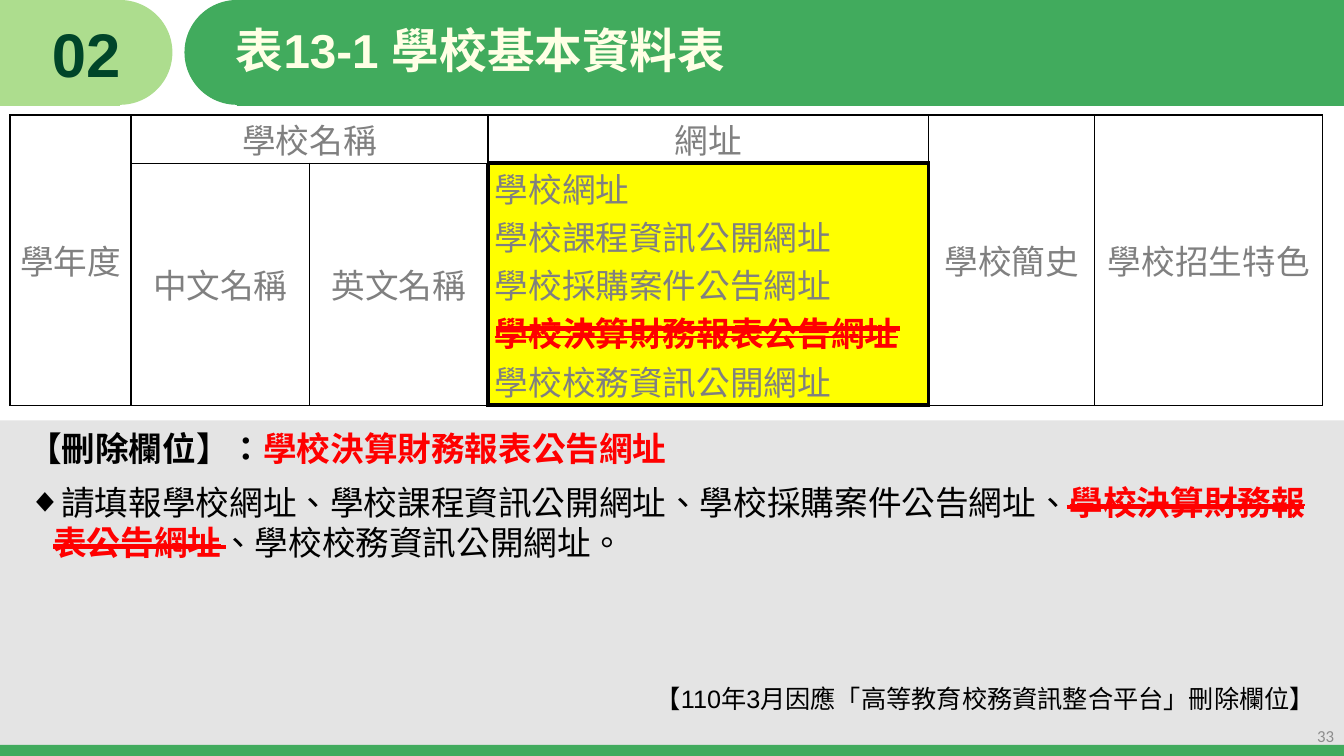
from lxml import etree
from pptx import Presentation
from pptx.dml.color import RGBColor
from pptx.enum.lang import MSO_LANGUAGE_ID
from pptx.enum.shapes import MSO_CONNECTOR, MSO_SHAPE
from pptx.enum.text import MSO_ANCHOR, PP_ALIGN
from pptx.oxml.ns import qn
from pptx.util import Inches, Pt

RECT, OVAL = MSO_SHAPE.RECTANGLE, MSO_SHAPE.OVAL
LINE = MSO_CONNECTOR.STRAIGHT
LEFT, MID, RIGHT = PP_ALIGN.LEFT, PP_ALIGN.CENTER, PP_ALIGN.RIGHT
TOP, CENTRE = MSO_ANCHOR.TOP, MSO_ANCHOR.MIDDLE
TAIWAN = MSO_LANGUAGE_ID.TRADITIONAL_CHINESE

BLACK = RGBColor(0, 0, 0)
WHITE = RGBColor(255, 255, 255)
RED = RGBColor(255, 0, 0)
YELLOW = RGBColor(255, 255, 0)
GREEN = RGBColor(0x41, 0xAB, 0x5D)
LIME = RGBColor(0xAD, 0xDD, 0x8E)
DARK = RGBColor(0x00, 0x45, 0x29)
CREAM = RGBColor(0xFF, 0xFF, 0xE5)
SILVER = RGBColor(0xBF, 0xBF, 0xBF)
GREY = RGBColor(0x80, 0x80, 0x80)
PALE = RGBColor(0x8C, 0x8C, 0x8C)

DROPPED = "學校決算財務報表公告網址"
BANDS = [
    (RECT, (0, 4.17, 13.33, 3.33), SILVER, 41),
    (RECT, (0, 7.39, 13.33, 0.11), GREEN, 100),
    (RECT, (0, 0, 1.19, 1.05), LIME, 100),
    (OVAL, (0.67, 0, 1.04, 1.04), LIME, 100),
    (OVAL, (1.83, 0, 1.04, 1.04), GREEN, 100),
    (RECT, (2.35, 0, 10.98, 1.05), GREEN, 100),
]
WIDTHS = [1.2, 1.77, 1.77, 4.37, 1.65, 2.26]
HEIGHTS = [0.48, 2.4]
SPANS = [(0, 0, 1, 0), (0, 1, 0, 2), (0, 4, 1, 4), (0, 5, 1, 5)]
LABELS = {
    (0, 0): "學年度", (0, 1): "學校名稱", (0, 3): "網址", (0, 4): "學校簡史",
    (0, 5): "學校招生特色", (1, 1): "中文名稱", (1, 2): "英文名稱",
}
SITES = ["學校網址", "學校課程資訊公開網址", "學校採購案件公告網址",
         DROPPED, "學校校務資訊公開網址"]
STRIKES = [(4.92, 8.93, 3.26), (10.58, 12.93, 5.03), (0.53, 2.24, 5.43)]

PLAIN = dict(name="Arial", size=Pt(24), bold=False, color=BLACK)
STRONG = PLAIN | dict(bold=True)
ALERT = STRONG | dict(color=RED)
GONE = ALERT | dict(strike=True)
HEAD = STRONG | dict(size=Pt(34), color=CREAM)
BADGE = STRONG | dict(size=Pt(44), color=DARK)
NOTE = PLAIN | dict(size=Pt(18))
PAGE = PLAIN | dict(name="Calibri", size=Pt(12), color=PALE)
LABEL = PLAIN | dict(name="Times New Roman", color=GREY)
SITE = LABEL | dict(name="Noto Sans CJK SC")


def place(box):
    return [Inches(v) for v in box]


def write(para, runs, **form):
    """Fill a paragraph with (text, format) runs."""
    for key, value in form.items():
        setattr(para, key, value)
    for text, style in runs:
        run = para.add_run()
        run.text = text
        run.font.language_id = TAIWAN
        for key, value in style.items():
            if key == "color":
                run.font.color.rgb = value
            elif key == "strike":
                run.font._element.set("strike", "sngStrike")
            else:
                setattr(run.font, key, value)


def add_band(slide, kind, box, color, alpha):
    band = slide.shapes.add_shape(kind, *place(box))
    band.shadow.inherit = False
    band.fill.solid()
    band.fill.fore_color.rgb = color
    band.line.fill.background()
    if alpha < 100:
        tint = band.element.spPr.find(".//" + qn("a:srgbClr"))
        etree.SubElement(tint, qn("a:alpha"), val=str(alpha * 1000))


def add_text(slide, box, lines, anchor=CENTRE):
    """Add a text box of (runs, paragraph format) lines."""
    frame = slide.shapes.add_textbox(*place(box)).text_frame
    frame.word_wrap = True
    frame.vertical_anchor = anchor
    for i, (runs, form) in enumerate(lines):
        para = frame.add_paragraph() if i else frame.paragraphs[0]
        write(para, runs, **form)
    return frame


def set_title(slide):
    title = slide.shapes.title
    title.element.getparent().append(title.element)
    title.left, title.top, title.width, title.height = place((2.24, 0, 10.9, 1.05))
    title.text_frame.vertical_anchor = CENTRE
    write(title.text_frame.paragraphs[0], [("表13-1 學校基本資料表", HEAD)],
          alignment=LEFT, line_spacing=0.9)


def set_bullet(para):
    props = para._p.get_or_add_pPr()
    props.set("marL", str(Inches(0.25)))
    props.set("indent", str(Inches(-0.25)))
    etree.SubElement(props, qn("a:buFont"), typeface="Arial")
    etree.SubElement(props, qn("a:buChar"), char="◆")


def set_edges(cell, widths):
    """Draw left, right, top and bottom borders of the given points."""
    props = cell._tc.get_or_add_tcPr()
    for i, (side, width) in enumerate(zip("LRTB", widths)):
        edge = etree.Element(qn("a:ln" + side), w=str(Pt(width)))
        fill = etree.SubElement(edge, qn("a:solidFill"))
        etree.SubElement(fill, qn("a:srgbClr"), val=str(BLACK))
        props.insert(i, edge)


def add_grid(slide):
    box = place((0.1, 1.14, sum(WIDTHS), sum(HEIGHTS)))
    table = slide.shapes.add_table(len(HEIGHTS), len(WIDTHS), *box).table
    table.first_row = table.horz_banding = False
    for col, width in zip(table.columns, WIDTHS):
        col.width = Inches(width)
    for row, height in zip(table.rows, HEIGHTS):
        row.height = Inches(height)
    for top, left, low, right in SPANS:
        table.cell(top, left).merge(table.cell(low, right))

    thick = {(0, 3): (1, 1, 1, 3), (1, 2): (1, 3, 1, 1),
             (1, 3): (3, 3, 3, 3), (1, 4): (3, 1, 1, 1)}
    for r in range(len(HEIGHTS)):
        for c in range(len(WIDTHS)):
            cell = table.cell(r, c)
            cell.margin_left = cell.margin_right = Inches(0.07)
            cell.margin_top = cell.margin_bottom = 0
            cell.vertical_anchor = CENTRE
            cell.fill.solid()
            cell.fill.fore_color.rgb = YELLOW if (r, c) == (1, 3) else WHITE
            set_edges(cell, thick.get((r, c), (1, 1, 1, 1)))
            if (r, c) in LABELS:
                write(cell.text_frame.paragraphs[0], [(LABELS[r, c], LABEL)],
                      alignment=MID)

    frame = table.cell(1, 3).text_frame
    for i, site in enumerate(SITES):
        para = frame.add_paragraph() if i else frame.paragraphs[0]
        style = SITE | dict(bold=True, color=RED, strike=True) if site == DROPPED else SITE
        write(para, [(site, style)], line_spacing=Pt(34.5))


def add_strike(slide, start, end, y):
    line = slide.shapes.add_connector(LINE, *place((start, y, end, y)))
    line.line.color.rgb = RED
    line.line.width = Pt(3)
    etree.SubElement(line.element.spPr, qn("a:effectLst"))


def add_body(slide):
    pitch = dict(line_spacing=Pt(28.5), space_before=Pt(10))
    frame = add_text(slide, (0.18, 4.2, 12.96, 3.3), [
        ([("【刪除欄位】：", STRONG), (DROPPED, ALERT)], pitch),
        ([("請填報學校網址、學校課程資訊公開網址、學校採購案件公告網址、", PLAIN),
          (DROPPED, GONE), ("、學校校務資訊公開網址。", PLAIN)], pitch),
        ([("【110年3月因應「高等教育校務資訊整合平台」刪除欄位】", NOTE)],
         pitch | dict(alignment=RIGHT, space_before=Pt(80))),
    ], TOP)
    set_bullet(frame.paragraphs[1])


def main():
    deck = Presentation()
    deck.slide_width, deck.slide_height = Inches(13.33), Inches(7.5)
    slide = deck.slides.add_slide(deck.slide_layouts[5])
    for band in BANDS:
        add_band(slide, *band)
    set_title(slide)
    add_body(slide)
    add_text(slide, (0, 0, 1.71, 1.05), [([("02", BADGE)], dict(alignment=MID))])
    add_grid(slide)
    for strike in STRIKES:
        add_strike(slide, *strike)
    add_text(slide, (10.33, 7.1, 3, 0.4), [([("33", PAGE)], dict(alignment=RIGHT))])
    deck.save("out.pptx")


if __name__ == "__main__":
    main()
